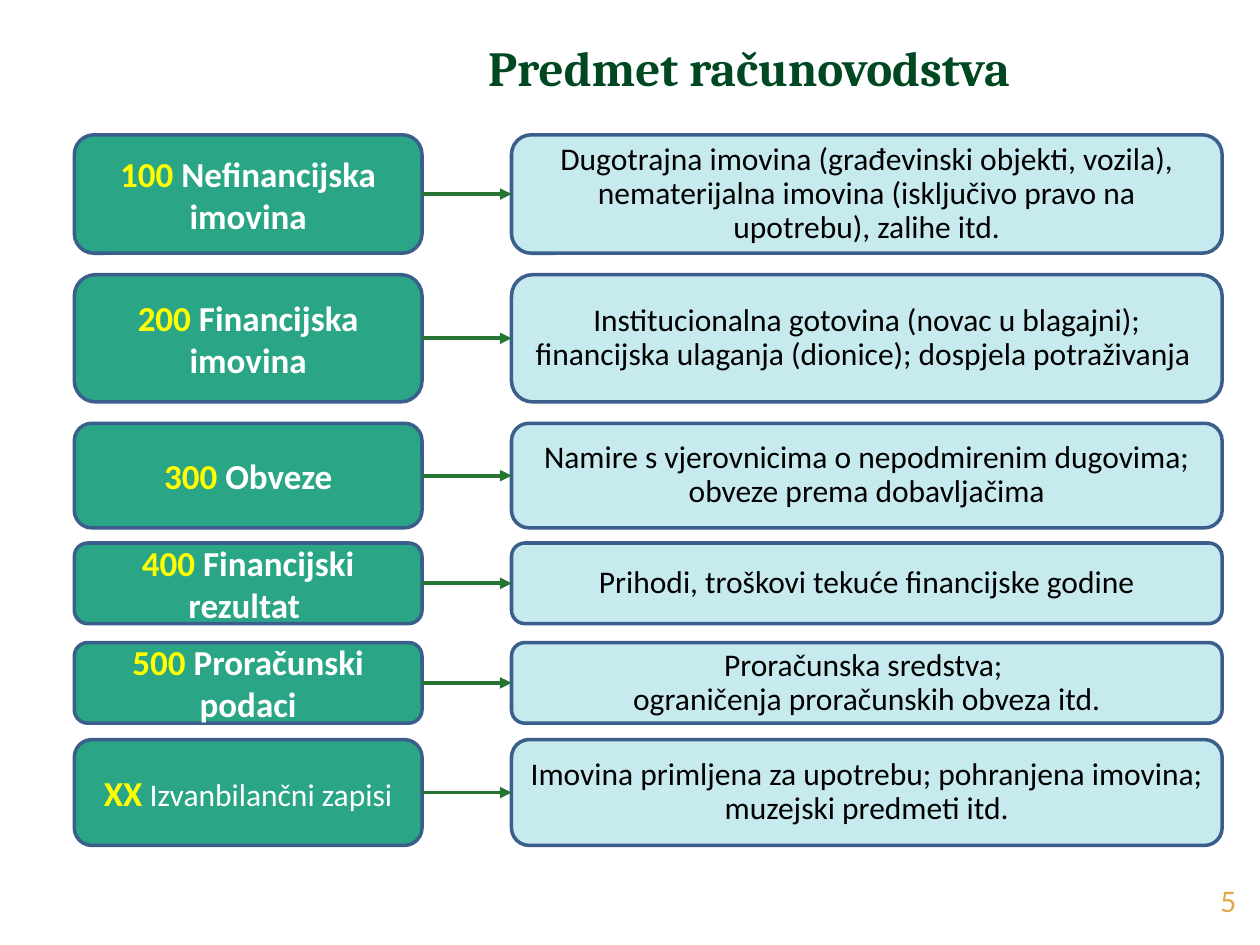
from lxml import etree
from pptx import Presentation
from pptx.dml.color import RGBColor
from pptx.enum.shapes import MSO_CONNECTOR, MSO_SHAPE
from pptx.enum.text import MSO_ANCHOR, PP_ALIGN
from pptx.oxml.ns import qn
from pptx.util import Inches, Pt

ROUNDED = MSO_SHAPE.ROUNDED_RECTANGLE
STRAIGHT = MSO_CONNECTOR.STRAIGHT
MIDDLE = MSO_ANCHOR.MIDDLE
CENTER, RIGHT = PP_ALIGN.CENTER, PP_ALIGN.RIGHT
RIGHT_SIDE, LEFT_SIDE = 3, 1

COLORS = {
    "title": "004821",
    "class": "2AA686",
    "content": "C7EAEF",
    "border": "3A5F8C",
    "arrow": "247632",
    "code": "FFFF00",
    "name": "FFFFFF",
    "text": "000000",
    "number": "DEAA46",
}

CLASS_LEFT, CLASS_WIDTH = 0.59, 2.76
CONTENT_LEFT, CONTENT_WIDTH = 4.06, 5.64

ROWS = [
    (1.07, 0.94, "100", " Nefinancijska imovina", 20, True,
     ["Dugotrajna imovina (građevinski objekti, vozila), nematerijalna imovina "
      "(isključivo pravo na upotrebu), zalihe itd."]),
    (2.18, 1.01, "200", " Financijska imovina", 20, True,
     ["Institucionalna gotovina (novac u blagajni); financijska ulaganja "
      "(dionice); dospjela potraživanja "]),
    (3.36, 0.83, "300", " Obveze", 20, True,
     ["Namire s vjerovnicima o nepodmirenim dugovima; obveze prema dobavljačima"]),
    (4.31, 0.64, "400", " Financijski rezultat ", 20, True,
     ["Prihodi, troškovi tekuće financijske godine"]),
    (5.10, 0.64, "500", " Proračunski podaci", 20, True,
     ["Proračunska sredstva; ", "ograničenja proračunskih obveza itd."]),
    (5.87, 0.84, "XX", " Izvanbilančni zapisi", 18, False,
     ["Imovina primljena za upotrebu; pohranjena imovina; muzejski predmeti itd."]),
]


def set_font(font, size, color, bold=False, name="Calibri"):
    font.name = name
    font.size = Pt(size)
    font.bold = bold
    font.color.rgb = RGBColor.from_string(COLORS[color])


def add_box(left, top, width, height, fill):
    box = page.shapes.add_shape(
        ROUNDED, Inches(left), Inches(top), Inches(width), Inches(height))
    box.shadow.inherit = False
    box.fill.solid()
    box.fill.fore_color.rgb = RGBColor.from_string(COLORS[fill])
    box.line.color.rgb = RGBColor.from_string(COLORS["border"])
    box.line.width = Pt(2)
    box.text_frame.word_wrap = True
    box.text_frame.vertical_anchor = MIDDLE
    return box


deck = Presentation()
deck.slide_width, deck.slide_height = Inches(10), Inches(7.5)
page = deck.slides.add_slide(deck.slide_layouts[5])

title = page.shapes.title
title.left, title.top = Inches(2.4), Inches(0.16)
title.width, title.height = Inches(7.09), Inches(0.75)
title.text_frame.text = "Predmet računovodstva"
title.text_frame.vertical_anchor = MIDDLE
para = title.text_frame.paragraphs[0]
para.alignment = CENTER
set_font(para.font, 28, "title", True, "Cambria")

for top, height, code, name, name_size, name_bold, lines in ROWS:
    class_box = add_box(CLASS_LEFT, top, CLASS_WIDTH, height, "class")
    para = class_box.text_frame.paragraphs[0]
    para.alignment = CENTER
    span = para.add_run()
    span.text = code
    set_font(span.font, 20, "code", True)
    span = para.add_run()
    span.text = name
    set_font(span.font, name_size, "name", name_bold)

    content_box = add_box(CONTENT_LEFT, top, CONTENT_WIDTH, height, "content")
    content_box.text_frame.text = "\n".join(lines)
    for para in content_box.text_frame.paragraphs:
        para.alignment = CENTER
        para.line_spacing = 0.9
        set_font(para.font, 18, "text")

    arrow = page.shapes.add_connector(STRAIGHT, 0, 0, 0, 0)
    arrow.begin_connect(class_box, RIGHT_SIDE)
    arrow.end_connect(content_box, LEFT_SIDE)
    arrow.line.color.rgb = RGBColor.from_string(COLORS["arrow"])
    arrow.line.width = Pt(2.25)
    etree.SubElement(arrow.line._get_or_add_ln(), qn("a:tailEnd"), type="triangle")
    etree.SubElement(arrow._element.spPr, qn("a:effectLst"))

number_box = page.shapes.add_textbox(
    Inches(9.47), Inches(6.94), Inches(0.44), Inches(0.4))
number_box.text_frame.word_wrap = True
para = number_box.text_frame.paragraphs[0]
para.text = "5"
para.alignment = RIGHT
set_font(para.font, 18, "number")

deck.save("out.pptx")
